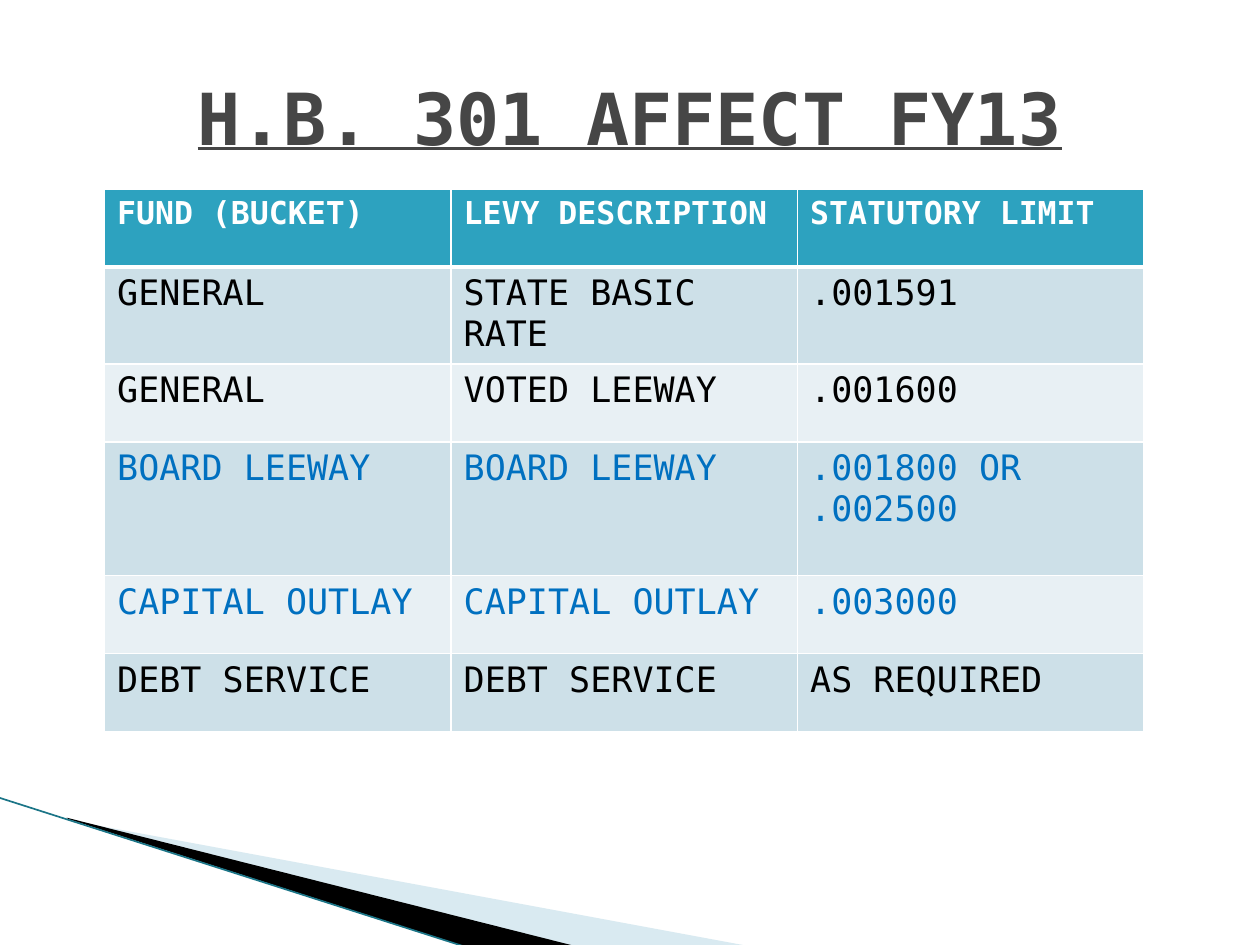
import pptx
import pptx.util
import pptx.dml.color
import pptx.enum.shapes
import pptx.enum.text
import pptx.oxml
import pptx.oxml.ns
from pptx.util import Inches

FONT = "DejaVu Sans Mono"
NS = pptx.oxml.ns.nsdecls("a")


def rgb(value):
    return pptx.dml.color.RGBColor.from_string(value)


def write(p, text, color, **formats):
    r = p.add_run()
    r.text = text
    r.font.color.rgb = rgb(color)
    for name, value in formats.items():
        setattr(r.font, name, value)


prs = pptx.Presentation()
prs.slide_width, prs.slide_height = Inches(10), Inches(7.5)
s = prs.slides.add_slide(prs.slide_layouts[6])

# Corner wedges: points in inches, fill, opacity in percent
wedges = [
    ([(0.55, 6.51), (5.95, 7.51), (4.56, 7.51), (0.55, 6.5)], "A0CBDC", 40),
    ([(0.53, 6.49), (4.57, 7.51), (3.72, 7.52), (0.54, 6.5)], "000000", 100),
]
for points, color, opacity in wedges:
    start, *rest = [(Inches(x), Inches(y)) for x, y in points]
    fb = s.shapes.build_freeform(*start)
    fb.add_line_segments(rest, close=True)
    sp = fb.convert_to_shape()
    sp.shadow.inherit = False
    sp.line.fill.background()
    sp.fill.solid()
    sp.fill.fore_color.rgb = rgb(color)
    if opacity < 100:
        clr = sp._element.spPr.find(".//" + pptx.oxml.ns.qn("a:srgbClr"))
        clr.append(pptx.oxml.parse_xml(f'<a:alpha {NS} val="{opacity * 1000}"/>'))

# Corner line
line = s.shapes.add_connector(
    pptx.enum.shapes.MSO_CONNECTOR.STRAIGHT,
    Inches(-0.01), Inches(6.33), Inches(3.71), Inches(7.52))
line.line.color.rgb = rgb("1B7587")
line.line.width = pptx.util.Pt(0.95)
line._element.spPr.append(pptx.oxml.parse_xml(f"<a:effectLst {NS}/>"))

# Title
sp = s.shapes.add_textbox(Inches(0.5), Inches(0.3), Inches(9), Inches(1.25))
tf = sp.text_frame
tf.word_wrap = True
tf.vertical_anchor = pptx.enum.text.MSO_ANCHOR.MIDDLE
p = tf.paragraphs[0]
p.alignment = pptx.enum.text.PP_ALIGN.CENTER
write(p, "H.B. 301 AFFECT FY13", "464646",
      name=FONT, size=pptx.util.Pt(41), bold=True, underline=True)

# Levy table: text colour, then the cells of the row
rows = [
    ("FFFFFF", "FUND (BUCKET)", "LEVY DESCRIPTION", "STATUTORY LIMIT"),
    ("000000", "GENERAL", "STATE BASIC RATE", ".001591"),
    ("000000", "GENERAL", "VOTED LEEWAY", ".001600"),
    ("0070C0", "BOARD LEEWAY", "BOARD LEEWAY", ".001800 OR .002500"),
    ("0070C0", "CAPITAL OUTLAY", "CAPITAL OUTLAY", ".003000"),
    ("000000", "DEBT SERVICE", "DEBT SERVICE", "AS REQUIRED"),
]
heights = [0.62, 0.62, 0.62, 1.06, 0.62, 0.62]
table = s.shapes.add_table(len(rows), 3, Inches(0.83), Inches(1.5),
                           Inches(8.25), Inches(sum(heights))).table
for column in table.columns:
    column.width = Inches(2.75)

for i, (color, *texts) in enumerate(rows):
    table.rows[i].height = Inches(heights[i])
    header = i == 0
    fill = "2DA2BF" if header else ("E8F0F4", "CDE0E8")[i % 2]
    for j, text in enumerate(texts):
        cell = table.cell(i, j)
        cell.fill.solid()
        cell.fill.fore_color.rgb = rgb(fill)
        write(cell.text_frame.paragraphs[0], text, color, name=FONT,
              size=pptx.util.Pt(18 if header else 20), bold=header)
        # White rules under and around the header; the body keeps the style's own
        if header:
            tcPr = cell._tc.get_or_add_tcPr()
            for k, (side, width) in enumerate(zip("LRTB", (1, 1, 1, 3))):
                tcPr.insert(k, pptx.oxml.parse_xml(
                    f'<a:ln{side} {NS} w="{pptx.util.Pt(width)}"><a:solidFill>'
                    f'<a:srgbClr val="FFFFFF"/></a:solidFill></a:ln{side}>'))

prs.save("out.pptx")
